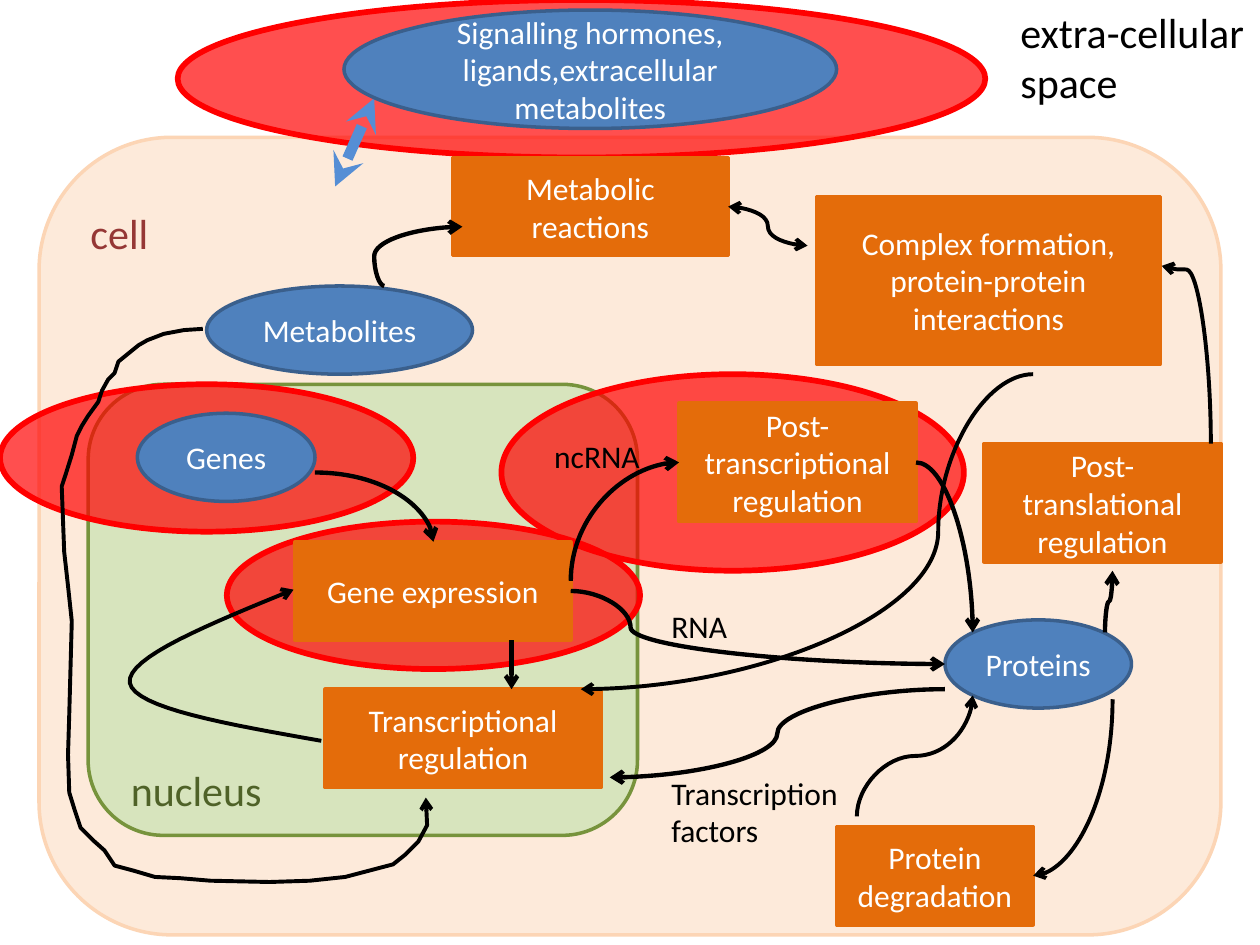
from pptx import Presentation
from pptx.dml.color import RGBColor
from pptx.enum.shapes import MSO_CONNECTOR, MSO_SHAPE
from pptx.enum.text import MSO_ANCHOR, MSO_AUTO_SIZE, PP_ALIGN
from pptx.oxml.ns import qn
from pptx.util import Inches, Pt
from lxml import etree

ROUND, OVAL, RECT = MSO_SHAPE.ROUNDED_RECTANGLE, MSO_SHAPE.OVAL, MSO_SHAPE.RECTANGLE
CURVE, STRAIGHT = MSO_CONNECTOR.CURVE, MSO_CONNECTOR.STRAIGHT
MIDDLE, CENTER = MSO_ANCHOR.MIDDLE, PP_ALIGN.CENTER
GROW = MSO_AUTO_SIZE.SHAPE_TO_FIT_TEXT

THEME = {
    "font": "Calibri", "body": 18, "region": 24,
    "white": "FFFFFF", "black": "000000", "cell": "953735", "nucleus": "4F6228",
    "exchange": "558ED5",
}
# kind: (preset, fill, line colour, line width, opacity %)
STYLES = {
    "cell": (ROUND, "FDEADA", "FCD5B5", 2, 100),
    "nucleus": (ROUND, "D7E4BD", "77933C", 2, 100),
    "highlight": (OVAL, "FF0000", "FF0000", 3.25, 69),
    "entity": (OVAL, "4F81BD", "3A5F8C", 2, 100),
    "process": (RECT, "E46C0A", "E46C0A", 2, 100),
}

# Boxes are left, top, width, height in inches
REGIONS = [("cell", (0.31, 1.09, 9.38, 6.33)), ("nucleus", (0.7, 3.05, 4.36, 3.58))]
HIGHLIGHTS = [(1.8, 4.14, 3.28, 1.17), (0, 3.05, 3.28, 1.17),
              (3.98, 2.97, 3.67, 1.56), (1.41, 0, 6.41, 1.25)]
NODES = [
    ("entity", "Genes", (1.09, 3.28, 1.41, 0.7)),
    ("process", "Gene expression", (2.34, 4.3, 2.19, 0.78)),
    ("entity", "Proteins", (7.5, 4.92, 1.48, 0.7)),
    ("entity", "Metabolites", (1.64, 2.27, 2.11, 0.7)),
    ("process", "Protein degradation", (6.64, 6.56, 1.56, 0.78)),
    ("process", "Metabolic reactions", (3.59, 1.25, 2.19, 0.78)),
    ("process", "Complex formation, protein-protein interactions", (6.48, 1.56, 2.73, 1.33)),
    ("process", "Transcriptional regulation", (2.58, 5.47, 2.19, 0.78)),
    ("entity", "Signalling hormones, ligands,extracellular metabolites", (2.73, 0.08, 3.91, 0.94)),
    ("process", "Post-transcriptional regulation", (5.39, 3.2, 1.88, 0.94)),
    ("process", "Post-translational regulation", (7.81, 3.52, 1.88, 0.94)),
]
# text lines, box, size, colour, wrap
LABELS = [
    (["cell"], (0.62, 1.6, 0.86, 0.5), "region", "cell", True),
    (["nucleus"], (0.94, 6.02, 1.33, 0.5), "region", "nucleus", True),
    (["extra-cellular", "space"], (8, 0, 2, 0.91), "region", "black", False),
    (["RNA"], (5.23, 4.77, 0.65, 0.4), "body", "black", False),
    (["ncRNA"], (4.3, 3.42, 0.89, 0.4), "body", "black", False),
    (["Transcription", "factors"], (5.23, 6.09, 1.54, 0.71), "body", "black", False),
]
# from, to, starting axis, bend (None = quarter curve), width, ends with arrowheads
ARROWS = [
    ((2.5, 3.75), (3.44, 4.3), "h", None, 2.5, ["tail"]),
    ((7.27, 3.67), (7.72, 5.02), "h", None, 2.5, ["tail"]),
    ((7.5, 5.47), (4.84, 6.17), "h", 0.5, 2.5, ["tail"]),
    ((8.83, 5.55), (8.2, 6.95), "v", None, 2.25, ["tail"]),
    ((6.8, 6.48), (7.72, 5.52), "v", 0.5, 2.25, ["tail"]),
    ((9.61, 3.52), (9.22, 2.11), "v", 0.98, 2.25, ["tail"]),
    ((6.41, 1.95), (5.78, 1.64), "h", 0.5, 2.25, ["head", "tail"]),
    ((8.2, 2.97), (4.61, 5.47), "h", 0.21, 2.25, ["tail"]),
    ((4.53, 4.61), (5.39, 3.67), "v", None, 2.5, ["tail"]),
    ((8.77, 5.02), (8.83, 4.53), "v", 0.5, 2.5, ["tail"]),
    ((4.53, 4.69), (7.5, 5.27), "h", 0.16, 2.5, ["tail"]),
    ((3.05, 2.27), (3.67, 1.8), "h", -0.13, 2.5, ["tail"]),
    ((4.06, 5.08), (4.06, 5.47), "v", 0.5, 2.5, ["tail"]),
]
# Bezier: start point, then control, control, end
FEEDBACK = [(2.55, 5.88), (1.81, 5.75), (1.07, 5.62), (1.03, 5.42),
            (1, 5.22), (1.67, 4.95), (2.33, 4.68)]
METABOLITE_ROUTE = [
    (1.61, 2.61), (1.46, 2.62), (1.3, 2.65), (1.17, 2.7), (1.1, 2.74), (0.94, 2.87),
    (0.91, 2.96), (0.86, 3.01), (0.81, 3.1), (0.78, 3.19), (0.7, 3.3), (0.65, 3.38),
    (0.61, 3.46), (0.57, 3.61), (0.52, 3.77), (0.49, 3.86), (0.51, 4.38), (0.54, 4.65),
    (0.57, 4.93), (0.55, 5.67), (0.54, 5.99), (0.55, 6.29), (0.59, 6.42), (0.64, 6.57),
    (0.74, 6.67), (0.83, 6.75), (0.91, 6.87), (1.06, 6.91), (1.23, 6.96), (1.43, 6.97),
    (1.67, 6.99), (2.14, 7), (2.46, 6.99), (2.74, 6.96), (2.93, 6.91), (3.12, 6.86),
    (3.22, 6.78), (3.32, 6.68), (3.39, 6.55), (3.38, 6.33)]


def rgb(value):
    return RGBColor.from_string(value)


def write(sp, lines, size, color, align=None):
    tf = sp.text_frame
    for i, line in enumerate(lines):
        p = tf.paragraphs[0] if i == 0 else tf.add_paragraph()
        p.alignment = align
        r = p.add_run()
        r.text = line
        for key, value in {"name": THEME["font"], "size": Pt(THEME[size])}.items():
            setattr(r.font, key, value)
        r.font.color.rgb = rgb(THEME[color])


def add_part(shapes, kind, box):
    preset, fill, line, width, opacity = STYLES[kind]
    sp = shapes.add_shape(preset, *map(Inches, box))
    sp.shadow.inherit = False
    sp.fill.solid()
    sp.fill.fore_color.rgb = rgb(fill)
    if opacity < 100:
        clr = sp._element.spPr.find(qn("a:solidFill"))[0]
        etree.SubElement(clr, qn("a:alpha"), val=str(opacity * 1000))
    sp.line.color.rgb = rgb(line)
    sp.line.width = Pt(width)
    return sp


def style_line(sp, color, width, ends, tip="arrow"):
    sp.line.color.rgb = rgb(THEME[color])
    sp.line.width = Pt(width)
    spPr = sp._element.spPr
    for end in ends:
        etree.SubElement(spPr.find(qn("a:ln")), qn(f"a:{end}End"), type=tip)
    if spPr.find(qn("a:effectLst")) is None:
        etree.SubElement(spPr, qn("a:effectLst"))


def add_curve(shapes, start, end, axis, bend, width, ends):
    (x1, y1), (x2, y2) = start, end
    w, h = abs(x2 - x1), abs(y2 - y1)
    flip = {"flipH": x2 < x1, "flipV": y2 < y1}
    if axis == "v":  # a quarter turn swaps the sides
        w, h = h, w
        flip = {"flipH": y2 < y1, "flipV": x2 > x1}
    left, top = (x1 + x2 - w) / 2, (y1 + y2 - h) / 2
    c = shapes.add_connector(CURVE, *map(Inches, (left, top, left + w, top + h)))
    xfrm = c._element.spPr.find(qn("a:xfrm"))
    if axis == "v":
        xfrm.set("rot", str(90 * 60000))
    for key, on in flip.items():
        if on:
            xfrm.set(key, "1")
    geom = c._element.spPr.find(qn("a:prstGeom"))
    if bend is None:
        geom.set("prst", "curvedConnector2")
    else:
        etree.SubElement(geom.find(qn("a:avLst")), qn("a:gd"),
                         name="adj1", fmla=f"val {round(bend * 100000)}")
    style_line(c, "black", width, ends)


def bezier(points, steps=16):
    out = [points[0]]
    for i in range(0, len(points) - 1, 3):
        for t in (n / steps for n in range(1, steps + 1)):
            weights = ((1 - t) ** 3, 3 * t * (1 - t) ** 2, 3 * t * t * (1 - t), t ** 3)
            out.append(tuple(sum(k * pt[d] for k, pt in zip(weights, points[i:i + 4]))
                             for d in (0, 1)))
    return out


def add_route(shapes, points):
    pts = [(Inches(x), Inches(y)) for x, y in points]
    builder = shapes.build_freeform(*pts[0])
    builder.add_line_segments(pts[1:], close=False)
    sp = builder.convert_to_shape()
    sp.shadow.inherit = False
    sp.fill.background()
    style_line(sp, "black", 2.25, ["tail"])


prs = Presentation()
prs.slide_width, prs.slide_height = Inches(10), Inches(7.5)
shapes = prs.slides.add_slide(prs.slide_layouts[6]).shapes

# Compartments and highlighted areas
for kind, box in REGIONS:
    add_part(shapes, kind, box)
group = shapes.add_group_shape()
for box in HIGHLIGHTS:
    add_part(group.shapes, "highlight", box)

# Exchange between the cell and the space around it
exchange = shapes.add_connector(STRAIGHT, *map(Inches, (2.97, 0.78, 2.66, 1.48)))
style_line(exchange, "exchange", 6.25, ["head", "tail"], "stealth")

# Entities and processes
for kind, text, box in NODES:
    sp = add_part(shapes, kind, box)
    sp.text_frame.word_wrap = True
    sp.text_frame.vertical_anchor = MIDDLE
    write(sp, [text], "body", "white", CENTER)

# Arrows
for arrow in ARROWS:
    add_curve(shapes, *arrow)
add_route(shapes, bezier(FEEDBACK))
add_route(shapes, METABOLITE_ROUTE)

# Labels
for lines, box, size, color, wrap in LABELS:
    sp = shapes.add_textbox(*map(Inches, box))
    sp.text_frame.word_wrap = wrap
    sp.text_frame.auto_size = GROW
    write(sp, lines, size, color)

prs.save("out.pptx")
